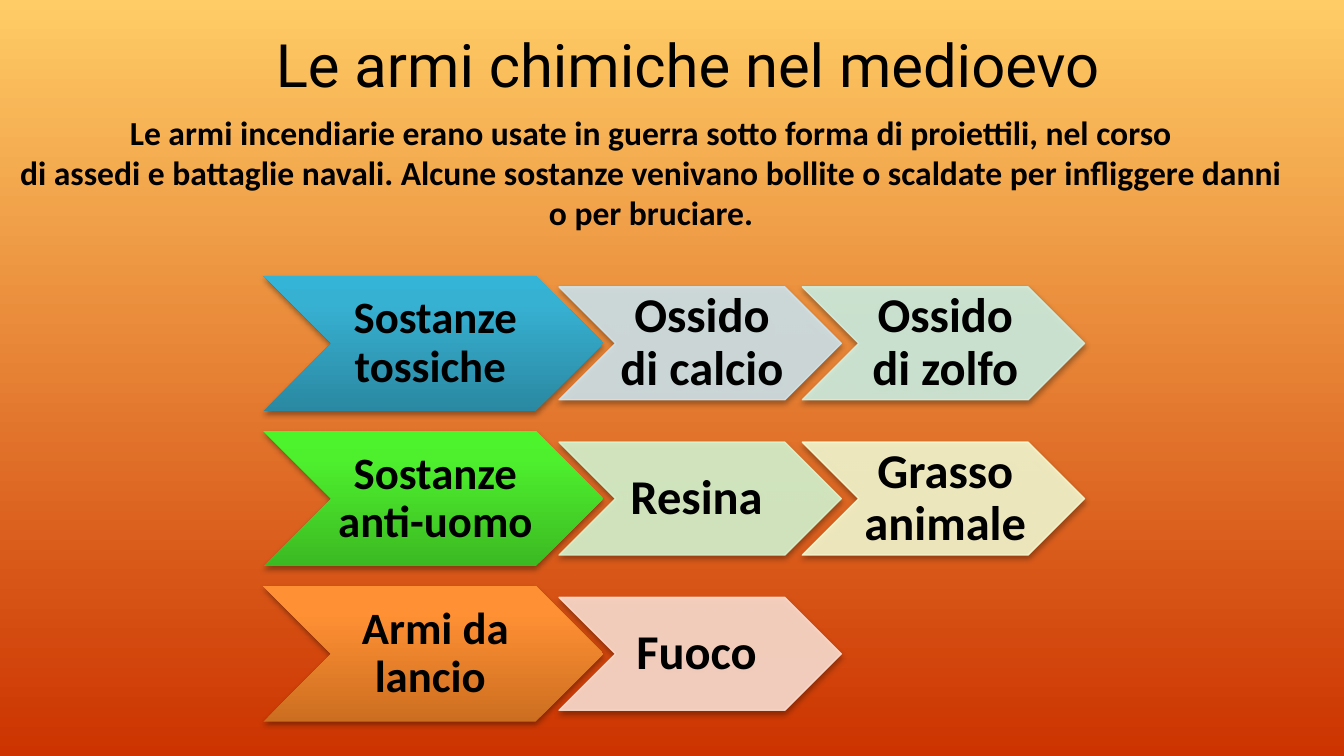
from copy import deepcopy

from lxml.etree import SubElement
from pptx import Presentation
from pptx.dml.color import RGBColor
from pptx.enum.shapes import MSO_SHAPE
from pptx.enum.text import MSO_ANCHOR, PP_ALIGN
from pptx.oxml.ns import qn
from pptx.util import Inches, Pt

COLORS = {
    "text": "000000",
    "sky": "FFCC66",
    "ember": "CC3300",
    "toxic": ["2A88A2", "37B1D2", "34B4D6"],
    "human": ["3CB923", "4EF02E", "4CF52A"],
    "thrown": ["CC6E20", "FF9034", "FF9136"],
    "lime": "D0E3EA",
    "sulfur": "CFEFE1",
    "resin": "D6F4CE",
    "fat": "F6F8CF",
    "fire": "FCDDCF",
}
# Each row: the main chevron, then its examples.
ROWS = [
    [("Sostanze tossiche ", "toxic"), ("Ossido di calcio", "lime"), ("Ossido di zolfo", "sulfur")],
    [("Sostanze anti-uomo ", "human"), ("Resina ", "resin"), ("Grasso animale", "fat")],
    [("Armi da lancio ", "thrown"), ("Fuoco ", "fire")],
]
# Hard spaces keep this phrase on one line.
PHRASE = chr(160).join(["di", "assedi", "e", "battaglie"])
TOP, BOTTOM = 2.05, 4.36
PITCH = (BOTTOM - TOP) / (len(ROWS) - 1)
MAIN_W, MAIN_H = 2.53, 1.01
ITEM_W, ITEM_H = 2.1, 0.84
MAIN_X, ITEM_X, STEP = 1.96, 4.16, 1.81


def write(frame, text, size, font="Calibri", bold=True):
    frame.word_wrap = True
    line = frame.paragraphs[0]
    line.text = text
    line.alignment = PP_ALIGN.CENTER
    line.font.name = font
    line.font.size = Pt(size)
    line.font.bold = bold
    line.font.color.rgb = RGBColor.from_string(COLORS["text"])
    return line


def add_chevron(x, y, w, h, text, size):
    """Add a chevron with a soft shadow below it and a centred label."""
    shape = slide.shapes.add_shape(MSO_SHAPE.CHEVRON, Inches(x), Inches(y), Inches(w), Inches(h))
    shape.shadow.inherit = False
    effects = shape._element.spPr.find(qn("a:effectLst"))
    shadow = SubElement(effects, qn("a:outerShdw"), blurRad=str(Pt(3.1)), dist=str(Pt(1.8)),
                        dir="5400000", rotWithShape="0")
    black = SubElement(shadow, qn("a:srgbClr"), val="000000")
    SubElement(black, qn("a:alpha"), val="35000")

    frame = shape.text_frame
    frame.vertical_anchor = MSO_ANCHOR.MIDDLE
    frame.margin_left = Inches(0.03)
    frame.margin_right = 0
    frame.margin_top = frame.margin_bottom = Inches(0.02)
    write(frame, text, size).line_spacing = 0.9
    return shape


deck = Presentation()
deck.slide_width = Inches(10)
deck.slide_height = Inches(10 * 9 / 16)
slide = deck.slides.add_slide(deck.slide_layouts[5])

# Background
back = slide.background.fill
back.gradient()
back.gradient_angle = 270
for stop, name in zip(back.gradient_stops, ("sky", "ember")):
    stop.color.rgb = RGBColor.from_string(COLORS[name])

# Title and introduction
title = slide.shapes.title
title.left, title.top = Inches(-0.23), Inches(0)
title.width, title.height = Inches(10.7), Inches(0.94)
title.text_frame.vertical_anchor = MSO_ANCHOR.MIDDLE
write(title.text_frame, "Le armi chimiche nel medioevo", 32, "Roboto", False)

intro = slide.shapes.add_textbox(Inches(0), Inches(0.78), Inches(9.69), Inches(1.01))
write(intro.text_frame,
      "Le armi incendiarie erano usate in guerra sotto forma di proiettili, nel corso "
      f"{PHRASE} navali. Alcune sostanze venivano bollite o scaldate "
      "per infliggere danni o per bruciare.", 18)

# Chevron rows
for row, (main, *items) in enumerate(ROWS):
    y = TOP + row * PITCH
    text, name = main
    shape = add_chevron(MAIN_X, y, MAIN_W, MAIN_H, text, 24)
    shape.line.fill.background()
    shape.fill.gradient()
    shape.fill.gradient_angle = 90
    stops = shape._element.spPr.find(".//" + qn("a:gsLst"))
    stops.append(deepcopy(stops[-1]))
    for stop, place, color in zip(shape.fill.gradient_stops, (0, 0.8, 1), COLORS[name]):
        stop.position = place
        stop.color.rgb = RGBColor.from_string(color)

    for col, (text, name) in enumerate(items):
        shape = add_chevron(ITEM_X + col * STEP, y + (MAIN_H - ITEM_H) / 2,
                            ITEM_W, ITEM_H, text, 26)
        shape.line.width = Pt(0.75)
        for fill in (shape.fill, shape.line.fill):
            fill.solid()
            fill.fore_color.rgb = RGBColor.from_string(COLORS[name])
        for color in shape._element.spPr.findall(".//" + qn("a:solidFill") + "/" + qn("a:srgbClr")):
            SubElement(color, qn("a:alpha"), val="90000")

deck.save("out.pptx")
